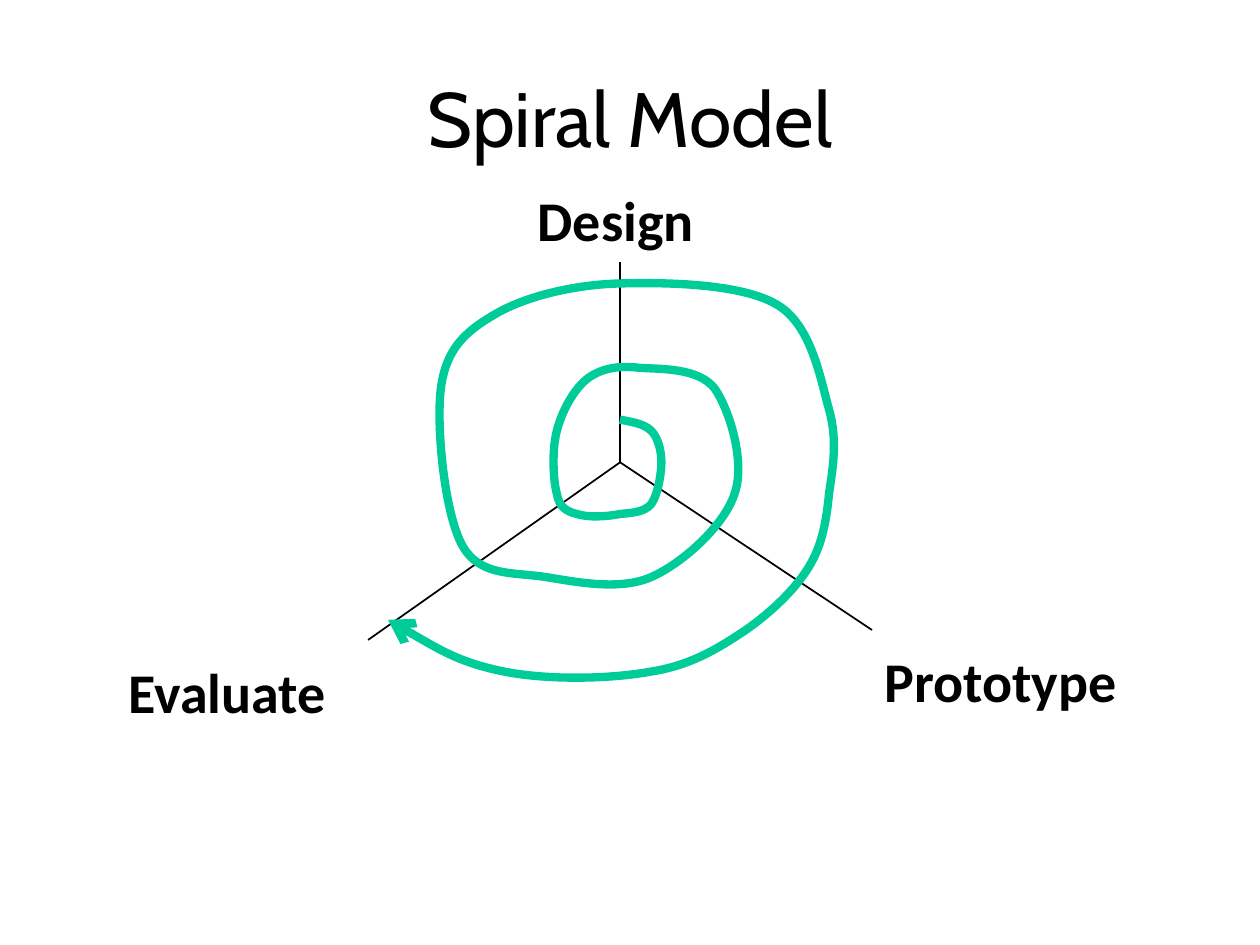
from typing import NamedTuple

from pptx import Presentation
from pptx.dml.color import RGBColor
from pptx.enum.shapes import MSO_CONNECTOR
from pptx.enum.text import MSO_ANCHOR, MSO_AUTO_SIZE, PP_ALIGN
from pptx.oxml.ns import qn
from pptx.util import Cm, Pt
from lxml.etree import SubElement

BLACK, GREEN = "000000", "00CC99"


class Label(NamedTuple):
    text: str
    left: float
    top: float
    width: float


class Point(NamedTuple):
    x: float
    y: float


LABELS = [
    Label("Design", 10.59, 3.61, 4.14),
    Label("Prototype", 17.58, 12.9, 5.92),
    Label("Evaluate", 2.34, 13.13, 5.16),
]
HUB = Point(12.5, 9.32)
TIPS = [Point(12.5, 5.28), Point(7.42, 12.9), Point(17.58, 12.7)]

# Spiral in steps of 0.0254 cm: each row is two control points and an end point.
STEP = Cm(0.0254)
START = (492, 333)
CURVES = [
    [(501, 335), (511, 336), (517, 342)],
    [(522, 347), (525, 357), (525, 367)],
    [(525, 376), (522, 393), (517, 400)],
    [(511, 407), (501, 407), (492, 408)],
    [(482, 410), (467, 411), (458, 408)],
    [(450, 406), (444, 403), (442, 392)],
    [(439, 381), (438, 357), (442, 342)],
    [(446, 326), (456, 308), (467, 300)],
    [(478, 292), (492, 290), (508, 292)],
    [(525, 293), (554, 292), (567, 308)],
    [(579, 325), (592, 367), (583, 392)],
    [(575, 417), (542, 447), (517, 458)],
    [(492, 469), (458, 462), (433, 458)],
    [(408, 454), (381, 458), (367, 433)],
    [(353, 408), (346, 339), (350, 308)],
    [(354, 278), (368, 264), (392, 250)],
    [(415, 236), (454, 226), (492, 225)],
    [(529, 224), (589, 225), (617, 242)],
    [(644, 258), (651, 300), (658, 325)],
    [(665, 350), (661, 371), (658, 392)],
    [(656, 412), (653, 432), (642, 450)],
    [(631, 468), (612, 486), (592, 500)],
    [(571, 514), (549, 528), (517, 533)],
    [(485, 539), (435, 540), (400, 533)],
    [(365, 526), (337, 509), (308, 492)],
]


def paint(target, color: str) -> None:
    """Give a fill or a font one solid colour."""
    if hasattr(target, "solid"):
        target.solid()
        target = target.fore_color
    else:
        target = target.color
    target.rgb = RGBColor.from_string(color)


def add_text(slide, text: str, left: float, top: float, width: float, height: float,
             *, font: str, size: float, bold: bool = False, wrap: bool = False,
             align=PP_ALIGN.LEFT, anchor=MSO_ANCHOR.TOP, fit=MSO_AUTO_SIZE.NONE) -> None:
    box = slide.shapes.add_textbox(Cm(left), Cm(top), Cm(width), Cm(height))
    frame = box.text_frame
    frame.word_wrap = wrap
    frame.auto_size = fit
    frame.vertical_anchor = anchor
    para = frame.paragraphs[0]
    para.alignment = align
    run = para.add_run()
    run.text = text
    run.font.name = font
    run.font.size = Pt(size)
    run.font.bold = bold
    paint(run.font, BLACK)


def add_axis(slide, tip: Point) -> None:
    axis = slide.shapes.add_connector(
        MSO_CONNECTOR.STRAIGHT, Cm(HUB.x), Cm(HUB.y), Cm(tip.x), Cm(tip.y))
    axis.line.width = Pt(1)
    paint(axis.line.fill, BLACK)
    SubElement(axis._element.spPr, qn("a:effectLst"))


def bend(shape) -> None:
    """Turn every three straight segments into one cubic curve."""
    lines = shape._element.xpath(".//a:lnTo")
    for i in range(0, len(lines), 3):
        trio = lines[i:i + 3]
        outline = trio[0].getparent()
        curve = SubElement(outline, qn("a:cubicBezTo"))
        for line in trio:
            curve.append(line[0])
            outline.remove(line)


def add_spiral(slide) -> None:
    pen = slide.shapes.build_freeform(*START, scale=STEP)
    pen.add_line_segments([point for row in CURVES for point in row], close=False)
    spiral = pen.convert_to_shape()
    bend(spiral)
    spiral.shadow.inherit = False
    spiral.fill.background()
    spiral.line.width = Pt(4.75)
    paint(spiral.line.fill, GREEN)
    SubElement(spiral.line._get_or_add_ln(), qn("a:tailEnd"), type="arrow")


def main() -> None:
    deck = Presentation()
    deck.slide_width, deck.slide_height = Cm(25.4), Cm(19.05)
    slide = deck.slides.add_slide(deck.slide_layouts[6])
    add_text(slide, "Spiral Model", 1.27, 0.76, 22.86, 3.18, font="Cabin", size=44,
             wrap=True, align=PP_ALIGN.CENTER, anchor=MSO_ANCHOR.MIDDLE)
    for label in LABELS:
        add_text(slide, *label, 1.62, font="Calibri", size=32, bold=True,
                 fit=MSO_AUTO_SIZE.SHAPE_TO_FIT_TEXT)
    for tip in TIPS:
        add_axis(slide, tip)
    add_spiral(slide)
    deck.save("out.pptx")


if __name__ == "__main__":
    main()
